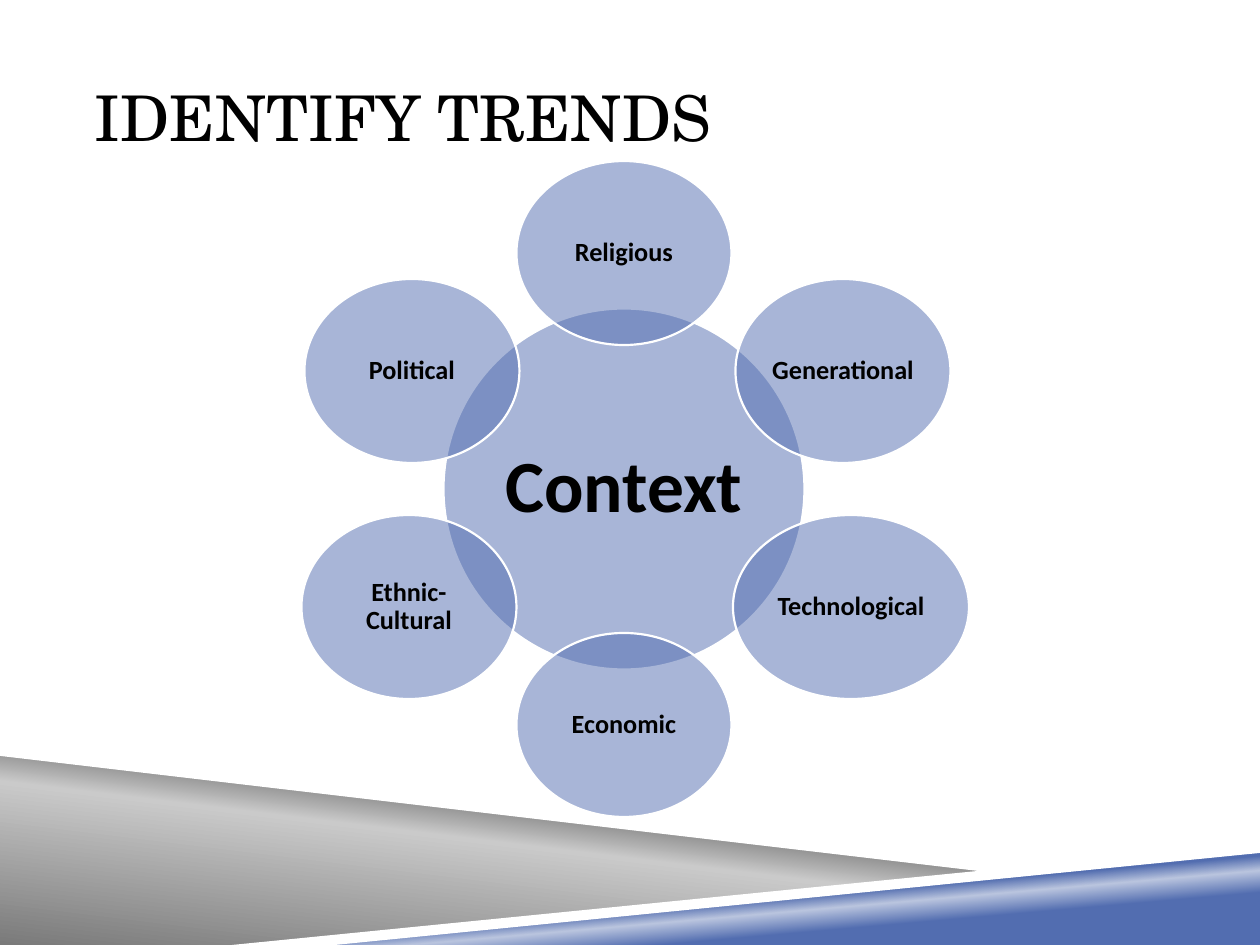
from math import cos, radians

from lxml.etree import SubElement
from pptx import Presentation
from pptx.dml.color import RGBColor as RGB
from pptx.enum.shapes import MSO_SHAPE as SHAPE
from pptx.enum.text import MSO_ANCHOR as ANCHOR, PP_ALIGN as ALIGN
from pptx.oxml.ns import qn
from pptx.util import Pt

PX = 914400 / 126
C = {"blue": "526DB0", "pale": "BAC5DF", "gray": "7A7A7A",
     "silver": "CACACA", "white": "FFFFFF", "black": "000000"}


def px(n):
    return round(n * PX)


def set_text(tf, text, align, margins, **fmt):
    tf.word_wrap = True
    tf.vertical_anchor = ANCHOR.MIDDLE
    tf.margin_left = tf.margin_right = px(margins[0])
    tf.margin_top = tf.margin_bottom = px(margins[1])
    p = tf.paragraphs[0]
    p.alignment = align
    r = p.add_run()
    r.text = text
    for key, value in fmt.items():
        setattr(r.font, key, value)
    r.font.color.rgb = RGB.from_string(C["black"])
    return p


prs = Presentation()
prs.slide_width, prs.slide_height = px(1260), px(945)
s = prs.slides.add_slide(prs.slide_layouts[5])

# Corner wedges and their white edges: points, gradient stops, upward angle
wedges = [
    ([(0, 752), (998, 872), (252, 945), (0, 945)],
     [(0, "gray"), (52, "silver"), (66, "gray")], 83),
    ([(249, 945), (1260, 847), (1260, 945)],
     [(28, "blue"), (40, "pale"), (48, "blue")], 95),
    ([(0, 746), (0, 756), (995, 873), (1048, 869)], None, None),
    ([(1260, 843), (232, 945), (335, 945), (1260, 853)], None, None),
]
for points, stops, angle in wedges:
    builder = s.shapes.build_freeform(*points[0], scale=PX)
    builder.add_line_segments(points[1:], close=True)
    sp = builder.convert_to_shape()
    sp.shadow.inherit = False
    sp.line.fill.background()
    if stops is None:
        sp.fill.solid()
        sp.fill.fore_color.rgb = RGB.from_string(C["white"])
        continue
    sp.fill.gradient()
    sp.fill.gradient_angle = angle
    gs_list = sp._element.spPr.find(qn("a:gradFill")).find(qn("a:gsLst"))
    for gs in list(gs_list):
        gs_list.remove(gs)
    for pos, name in stops:
        gs = SubElement(gs_list, qn("a:gs"), pos=str(pos * 1000))
        SubElement(gs, qn("a:srgbClr"), val=C[name])

# Title
title = s.shapes.title
title.left, title.top, title.width, title.height = px(95), px(38), px(1071), px(157)
set_text(title.text_frame, "IDENTIFY TRENDS", ALIGN.LEFT, (0, 6),
         size=Pt(36), name="TeX Gyre Schola")

# Hub and six circles clockwise around it: label, x offset from hub, width
CX, CY, RADIUS = 624, 489, 236
ring = [("Religious", 0, 215), ("Generational", 219, 215),
        ("Technological", 227, 236), ("Economic", 0, 215),
        ("Ethnic-Cultural", -215, 215), ("Political", -212, 215)]
circles = [("Context", CX, CY, 361, 361, 42, 8)]
for i, (label, dx, width) in enumerate(ring):
    cy = CY - RADIUS * cos(radians(60 * i))
    circles.append((label, CX + dx, cy, width, 184, 15, 2))

for label, cx, cy, w, h, size, margin in circles:
    sp = s.shapes.add_shape(SHAPE.OVAL, px(cx - w / 2), px(cy - h / 2), px(w), px(h))
    sp.shadow.inherit = False
    sp.fill.solid()
    sp.fill.fore_color.rgb = RGB.from_string(C["blue"])
    color = sp._element.spPr.find(qn("a:solidFill"))[0]
    SubElement(color, qn("a:alpha"), val="50000")
    sp.line.color.rgb = RGB.from_string(C["white"])
    sp.line.width = Pt(1.25)
    p = set_text(sp.text_frame, label, ALIGN.CENTER, (margin, margin),
                 size=Pt(size), name="Calibri", bold=True)
    p.line_spacing = 0.9

prs.save("out.pptx")
